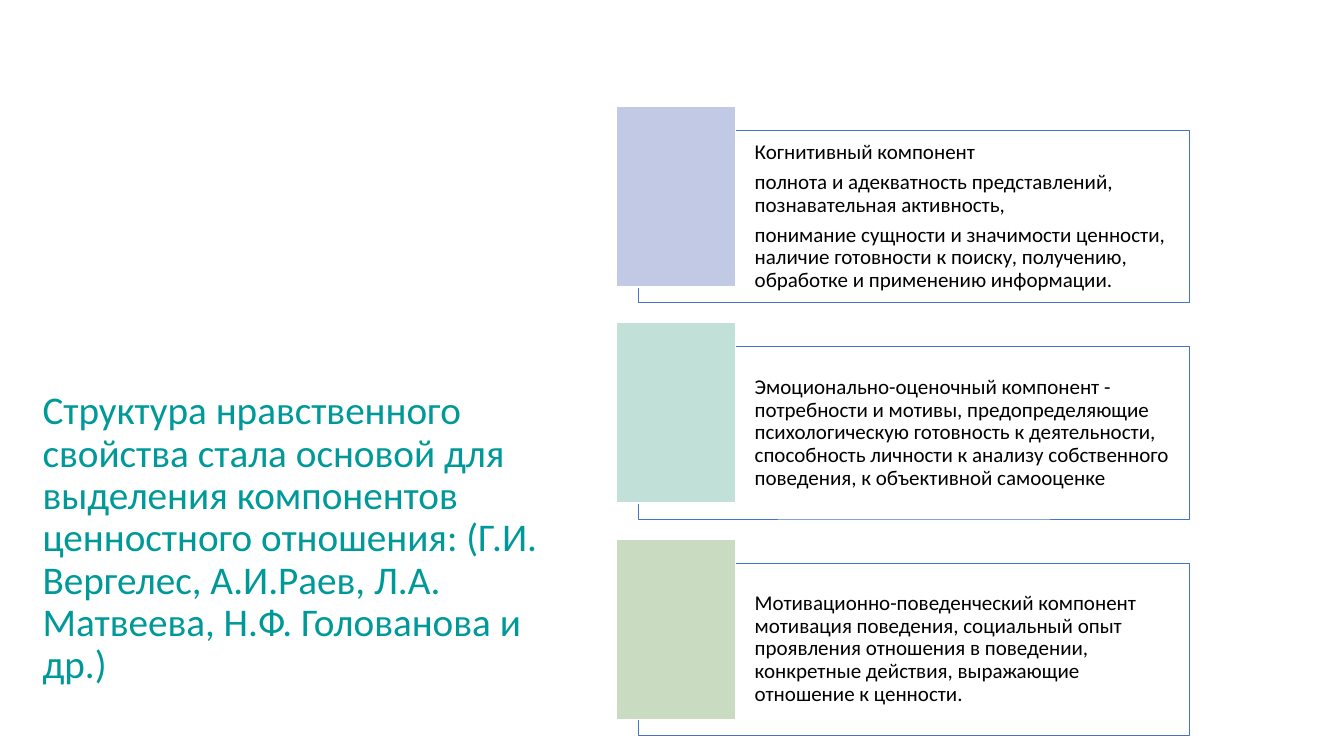
import pptx
import pptx.util
import pptx.dml.color
import pptx.enum.shapes
import pptx.enum.text
import pptx.oxml.ns
import lxml.etree

Cm = pptx.util.Cm
Pt = pptx.util.Pt
RGBColor = pptx.dml.color.RGBColor
Anchor = pptx.enum.text.MSO_ANCHOR

TEAL = RGBColor(0x00, 0x99, 0x99)
BLUE = RGBColor(0x44, 0x72, 0xC4)
WHITE = RGBColor(0xFF, 0xFF, 0xFF)
BLACK = RGBColor(0x00, 0x00, 0x00)
LILAC = RGBColor(0xC1, 0xC9, 0xE4)
MINT = RGBColor(0xC1, 0xE0, 0xD7)
SAGE = RGBColor(0xC9, 0xDB, 0xC1)

TITLE = (
    "Структура нравственного свойства стала основой для выделения "
    "компонентов ценностного отношения: (Г.И. Вергелес, А.И.Раев, "
    "Л.А. Матвеева, Н.Ф. Голованова и др.)"
)
PARTS = [
    (LILAC, [
        "Когнитивный компонент",
        "полнота и адекватность представлений, познавательная активность,",
        "понимание сущности и значимости ценности, наличие готовности к "
        "поиску, получению, обработке и применению информации.",
    ]),
    (MINT, [
        "Эмоционально-оценочный компонент - потребности и мотивы, "
        "предопределяющие психологическую готовность к деятельности, "
        "способность личности к анализу собственного поведения, "
        "к объективной самооценке",
    ]),
    (SAGE, [
        "Мотивационно-поведенческий компонент мотивация поведения, "
        "социальный опыт проявления отношения в поведении, конкретные "
        "действия, выражающие отношение к ценности.",
    ]),
]
TOP = 3.29
STEP = 5.45


class Deck:
    font = "Calibri"

    def __init__(self):
        self.prs = pptx.Presentation()
        self.prs.slide_width = Cm(33.87)
        self.prs.slide_height = Cm(19.05)
        self.slide = self.prs.slides.add_slide(self.prs.slide_layouts[5])

    def text(self, frame, lines, size, color, after=0):
        frame.word_wrap = True
        frame.auto_size = pptx.enum.text.MSO_AUTO_SIZE.NONE
        for i, line in enumerate(lines):
            para = frame.paragraphs[0] if i == 0 else frame.add_paragraph()
            para.text = line
            para.alignment = pptx.enum.text.PP_ALIGN.LEFT
            para.line_spacing = 0.9
            para.space_before = Pt(0)
            para.space_after = Pt(after)
            para.font.name = self.font
            para.font.size = Pt(size)
            para.font.color.rgb = color

    def title(self, text, x, y, w, h):
        head = self.slide.shapes.title
        head.left, head.top, head.width, head.height = Cm(x), Cm(y), Cm(w), Cm(h)
        head.text_frame.vertical_anchor = Anchor.TOP
        self.text(head.text_frame, [text], 28, TEAL)

    def rect(self, x, y, w, h, fill, line, width):
        kind = pptx.enum.shapes.MSO_SHAPE.RECTANGLE
        shape = self.slide.shapes.add_shape(kind, Cm(x), Cm(y), Cm(w), Cm(h))
        shape.shadow.inherit = False
        shape.fill.solid()
        shape.fill.fore_color.rgb = fill
        shape.line.color.rgb = line
        shape.line.width = Pt(width)
        return shape

    def panel(self, lines, x, y, w, h):
        shape = self.rect(x, y, w, h, WHITE, BLUE, 0.5)
        solid = shape.element.spPr.find(pptx.oxml.ns.qn("a:solidFill"))
        lxml.etree.SubElement(solid[0], pptx.oxml.ns.qn("a:alpha"), val="40000")
        frame = shape.text_frame
        frame.vertical_anchor = Anchor.MIDDLE
        frame.margin_left = Cm(2.92)
        frame.margin_right = frame.margin_top = frame.margin_bottom = Cm(0.15)
        self.text(frame, lines, 15, BLACK, 5.25)

    def tile(self, color, x, y, w, h):
        self.rect(x, y, w, h, color, WHITE, 1)


def main():
    deck = Deck()
    deck.title(TITLE, 0.82, 9.72, 13.61, 8.75)
    for i, (color, lines) in enumerate(PARTS):
        y = TOP + i * STEP
        deck.panel(lines, 16.1, y, 13.87, 4.34)
        deck.tile(color, 15.53, y - 0.61, 3.01, 4.55)
    deck.prs.save("out.pptx")


if __name__ == "__main__":
    main()
